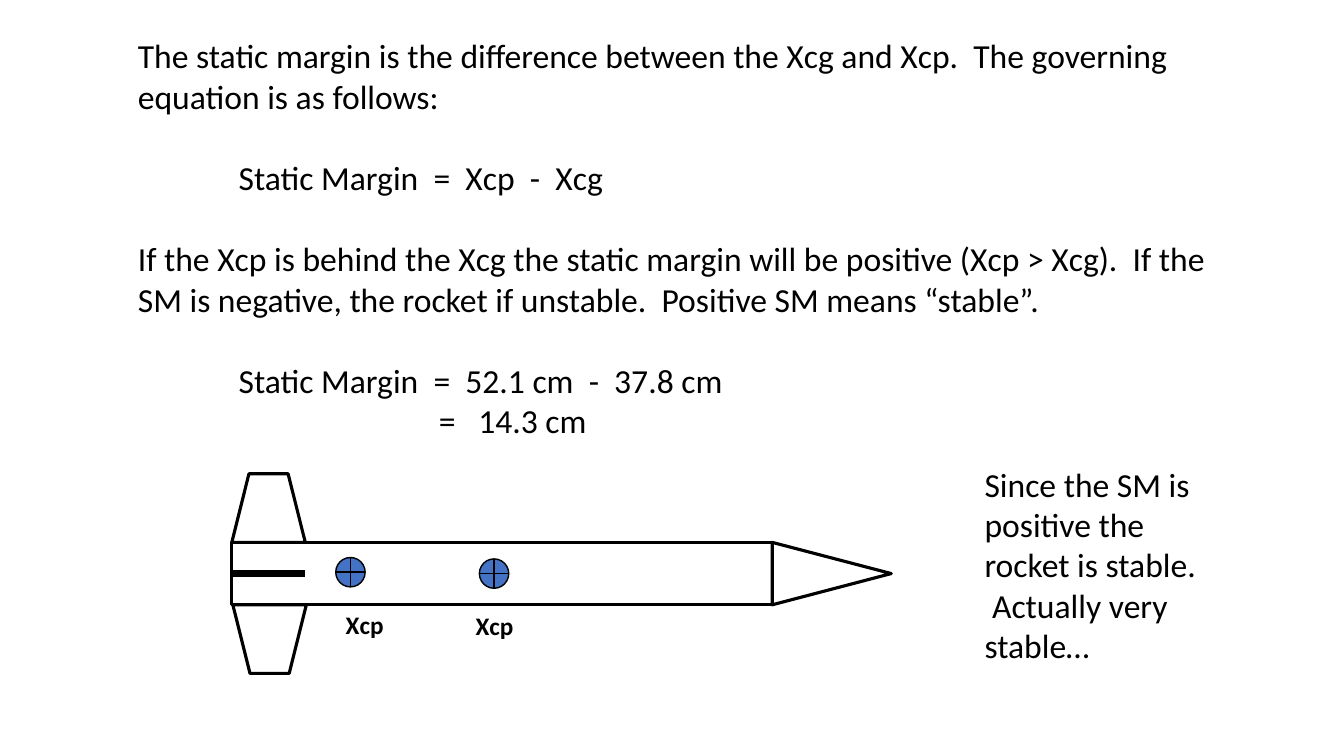
from lxml import etree
from pptx import Presentation
from pptx import util as u
from pptx.dml.color import RGBColor
from pptx.enum import shapes, text
from pptx.oxml.ns import qn

COLOURS = {"ink": "000000", "marker": "4472C4"}
BLANK_LINE = 29.3
EQUATION_INDENT = 72
RESULT_INDENT = 215

# wording, left indent, space before
EXPLANATION = [
    ("The static margin is the difference between the Xcg and Xcp.  The governing equation is as follows:", 0, 0),
    ("Static Margin  =  Xcp  -  Xcg", EQUATION_INDENT, BLANK_LINE),
    ("If the Xcp is behind the Xcg the static margin will be positive (Xcp > Xcg).  "
     "If the SM is negative, the rocket if unstable.  Positive SM means “stable”.", 0, BLANK_LINE),
    ("Static Margin  =  52.1 cm  -  37.8 cm", EQUATION_INDENT, BLANK_LINE),
    ("=   14.3 cm", RESULT_INDENT, 0),
]
CONCLUSION = [("Since the SM is positive the rocket is stable.  Actually very stable…", 0, 0)]


def colour(name):
    return RGBColor.from_string(COLOURS[name])


class RocketSlide:
    font = "Calibri"

    def __init__(self, deck):
        self.slide = deck.slides.add_slide(deck.slide_layouts[6])

    def words(self, box, paragraphs, **font_format):
        """Add a wrapped text box; each paragraph is (wording, indent, space before)."""
        frame = self.slide.shapes.add_textbox(*map(u.Pt, box)).text_frame
        frame.word_wrap = True
        frame.auto_size = text.MSO_AUTO_SIZE.SHAPE_TO_FIT_TEXT
        for index, (wording, indent, gap) in enumerate(paragraphs):
            paragraph = frame.paragraphs[0] if index == 0 else frame.add_paragraph()
            paragraph.space_before = u.Pt(gap)
            paragraph._p.get_or_add_pPr().set("marL", str(u.Pt(indent)))
            run = paragraph.add_run()
            run.text = wording
            run.font.color.rgb = colour("ink")
            for key, value in {"name": self.font, **font_format}.items():
                setattr(run.font, key, value)

    def outline(self, parent, kind, box, weight=2.25, fill=None, rotation=0):
        part = parent.shapes.add_shape(kind, *map(u.Pt, box))
        part.shadow.inherit = False
        part.rotation = rotation
        if fill:
            part.fill.solid()
            part.fill.fore_color.rgb = colour(fill)
        else:
            part.fill.background()
        self.stroke(part, weight)

    def line(self, parent, start, end, weight):
        edge = parent.shapes.add_connector(
            shapes.MSO_CONNECTOR.STRAIGHT, *map(u.Pt, (*start, *end)))
        self.stroke(edge, weight)
        etree.SubElement(edge._element.spPr, qn("a:effectLst"))

    def stroke(self, part, weight):
        part.line.color.rgb = colour("ink")
        part.line.width = u.Pt(weight)

    def rocket(self, left, top, length, diameter):
        kinds = shapes.MSO_SHAPE
        nose_length, fin_width, fin_height = 85, 52.5, 49
        axis, bottom = top + diameter / 2, top + diameter
        nose_middle = left + length + nose_length / 2
        group = self.slide.shapes.add_group_shape()
        self.outline(group, kinds.RECTANGLE, (left, top, length, diameter))
        self.outline(group, kinds.ISOSCELES_TRIANGLE,
                     (nose_middle - diameter / 2, axis - nose_length / 2, diameter, nose_length),
                     rotation=90)
        self.outline(group, kinds.TRAPEZOID, (left, top - fin_height, fin_width, fin_height))
        self.outline(group, kinds.TRAPEZOID, (left + 0.7, bottom, fin_width, fin_height),
                     rotation=180)
        self.line(group, (left, axis), (left + fin_width, axis), 4.5)

    def marker(self, left, top, label_left, label_top):
        self.outline(self.slide, shapes.MSO_SHAPE.FLOWCHART_OR, (left, top, 21, 21),
                     weight=1, fill="marker")
        self.words((label_left, label_top, 74, 29), [("Xcp", 0, 0)], size=u.Pt(18), bold=True)


def main():
    deck = Presentation()
    deck.slide_width, deck.slide_height = u.Pt(960), u.Pt(540)
    page = RocketSlide(deck)
    page.words((91.4, 21.6, 777.6, 327), EXPLANATION, size=u.Pt(24))
    page.rocket(left=165.6, top=387.4, length=386, diameter=44.6)
    page.marker(239.8, 398.2, 239.8, 432)
    page.words((696.2, 327.6, 168.5, 152.6), CONCLUSION, size=u.Pt(24))
    page.marker(342.4, 399.2, 332.6, 432.7)
    deck.save("out.pptx")


if __name__ == "__main__":
    main()
